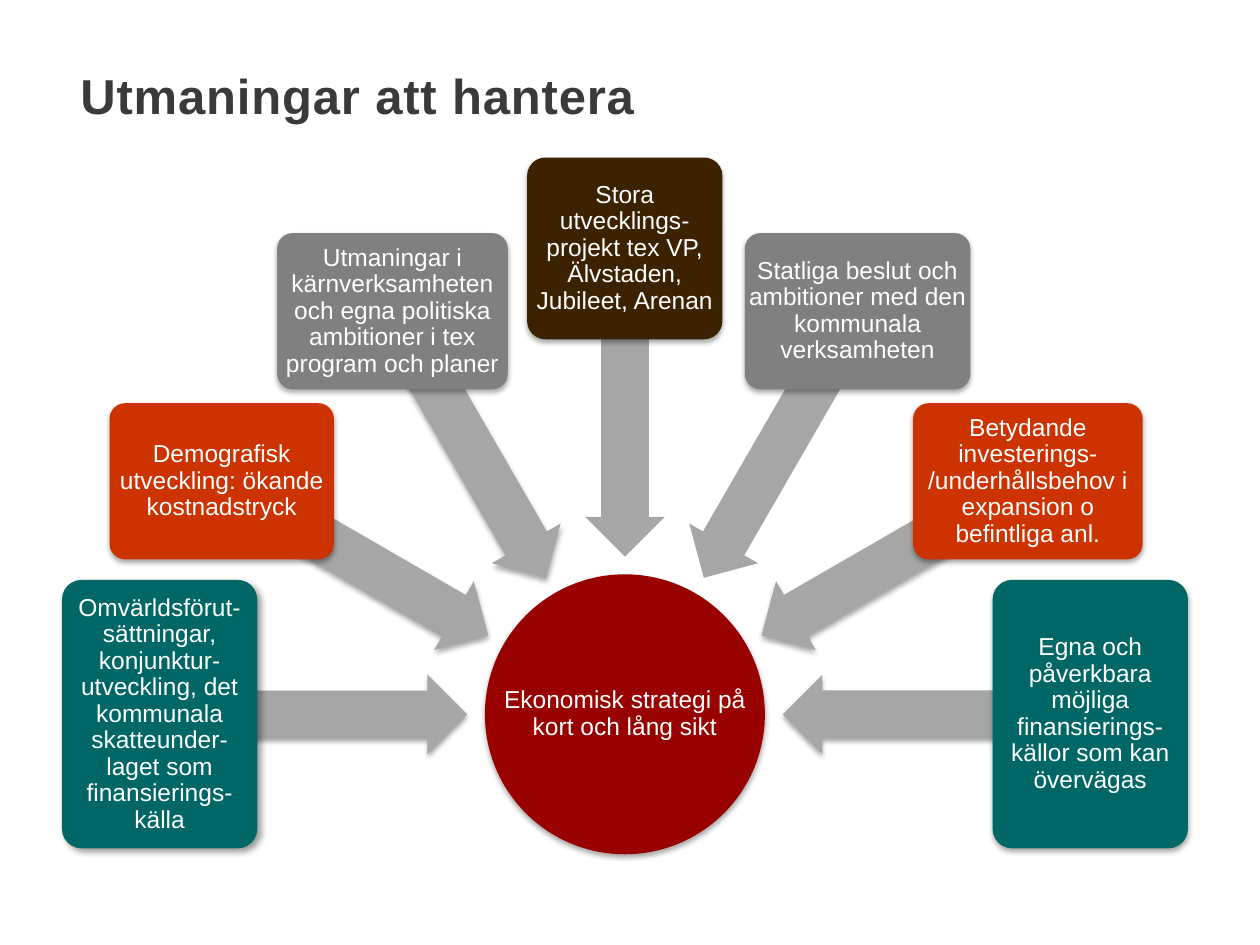
"""Build a slide with seven challenges pointing at one economic strategy."""
import math

import pptx
import pptx.dml.color
import pptx.enum.shapes
import pptx.enum.text
import pptx.oxml
import pptx.oxml.ns
import pptx.util

Pt = pptx.util.Pt
Kind = pptx.enum.shapes.MSO_SHAPE
Align = pptx.enum.text.PP_ALIGN
Middle = pptx.enum.text.MSO_ANCHOR.MIDDLE

TITLE = "Utmaningar att hantera"
GOAL = "Ekonomisk strategi på kort och lång sikt"
SOFT = (35, 3.1, 1.8, 90)
DEEP = (40, 4, 3, 45)
TEAL, RED, GREY, BROWN = "006666", "CC3300", "808080", "3C2200"
ITEMS = [
    ("Omvärldsförut-sättningar, konjunktur-utveckling, det kommunala "
     "skatteunder-laget som finansierings-källa",
     TEAL, (35.4, 331.4, 111.6, 153.4), DEEP, SOFT),
    ("Demografisk utveckling: ökande kostnadstryck",
     RED, (62.6, 230.4, 128.2, 89.3), SOFT, SOFT),
    ("Utmaningar i kärnverksamheten och egna politiska ambitioner i tex "
     "program och planer",
     GREY, (158.4, 133.2, 131.8, 89.3), SOFT, SOFT),
    ("Stora utvecklings-projekt tex VP, Älvstaden, Jubileet, Arenan",
     BROWN, (301.2, 90, 111.6, 103.9), SOFT, None),
    ("Statliga beslut och ambitioner med den kommunala verksamheten",
     GREY, (425.6, 133.2, 128.9, 89.3), SOFT, None),
    ("Betydande investerings- /underhållsbehov i expansion o befintliga anl.",
     RED, (521.8, 230.4, 131.2, 89.3), SOFT, SOFT),
    ("Egna och påverkbara möjliga finansierings-källor som kan övervägas",
     TEAL, (567.2, 331.4, 111.6, 153.4), SOFT, SOFT),
]
HUB_X, HUB_Y, HUB = 357.12, 408.2, 160
REACH, LONG, THICK = 178, 175.7, 45.4

LABEL = {"size": Pt(14), "name": "Arial"}
HEAD = {"size": Pt(28), "name": "Arial", "bold": True}


def color(text):
    return pptx.dml.color.RGBColor.from_string(text)


def shade(shape, blur):
    shape.shadow.inherit = False
    if blur:
        alpha, rad, dist, angle = blur
        effects = shape._element.spPr.find(pptx.oxml.ns.qn("a:effectLst"))
        effects.append(pptx.oxml.parse_xml(
            f'<a:outerShdw {pptx.oxml.ns.nsdecls("a")} blurRad="{Pt(rad)}" '
            f'dist="{Pt(dist)}" dir="{angle * 60000}" rotWithShape="0">'
            f'<a:srgbClr val="000000"><a:alpha val="{alpha * 1000}"/>'
            '</a:srgbClr></a:outerShdw>'))


def draw(slide, kind, place, fill, blur, adjust=(), turn=0):
    shape = slide.shapes.add_shape(kind, *map(Pt, place))
    shape.fill.solid()
    shape.fill.fore_color.rgb = color(fill)
    shape.line.fill.background()
    shape.rotation = turn
    for i, value in enumerate(adjust):
        shape.adjustments[i] = value
    shade(shape, blur)


def write(slide, text, place, style, ink, inset, align, lead):
    frame = slide.shapes.add_textbox(*map(Pt, place)).text_frame
    form = {"word_wrap": True, "vertical_anchor": Middle}
    form.update({f"margin_{side}": Pt(inset)
                 for side in ("left", "top", "right", "bottom")})
    for key, value in form.items():
        setattr(frame, key, value)
    para = frame.paragraphs[0]
    para.alignment, para.line_spacing = align, lead
    run = para.add_run()
    run.text = text
    for key, value in style.items():
        setattr(run.font, key, value)
    run.font.color.rgb = color(ink)
    return run


def label(slide, text, place):
    write(slide, text, place, LABEL, "FFFFFF", 2, Align.CENTER, 0.9)


def main():
    deck = pptx.Presentation()
    deck.slide_width, deck.slide_height = Pt(720), Pt(540)
    slide = deck.slides.add_slide(deck.slide_layouts[6])

    hub = (HUB_X - HUB / 2, HUB_Y - HUB / 2, HUB, HUB)
    draw(slide, Kind.OVAL, hub, "990000", SOFT)
    label(slide, GOAL, hub)

    step = 180 / (len(ITEMS) - 1)
    for i, (text, fill, place, blur, trail) in enumerate(ITEMS):
        turn = 180 + i * step
        angle = math.radians(turn)
        left = HUB_X + REACH * math.cos(angle) - LONG / 2
        top = HUB_Y + REACH * math.sin(angle) - THICK / 2
        draw(slide, Kind.LEFT_ARROW, (left, top, LONG, THICK), "A6A6A6",
             trail, (0.6, 0.5), turn % 360)
        draw(slide, Kind.ROUNDED_RECTANGLE, place, fill, blur, (0.1,))
        label(slide, text, place)

    run = write(slide, TITLE, (46, 30.2, 530.6, 54.7), HEAD, "3A3A3A", 0,
                Align.LEFT, Pt(27))
    run.font._element.set("spc", "50")
    deck.save("out.pptx")


if __name__ == "__main__":
    main()
